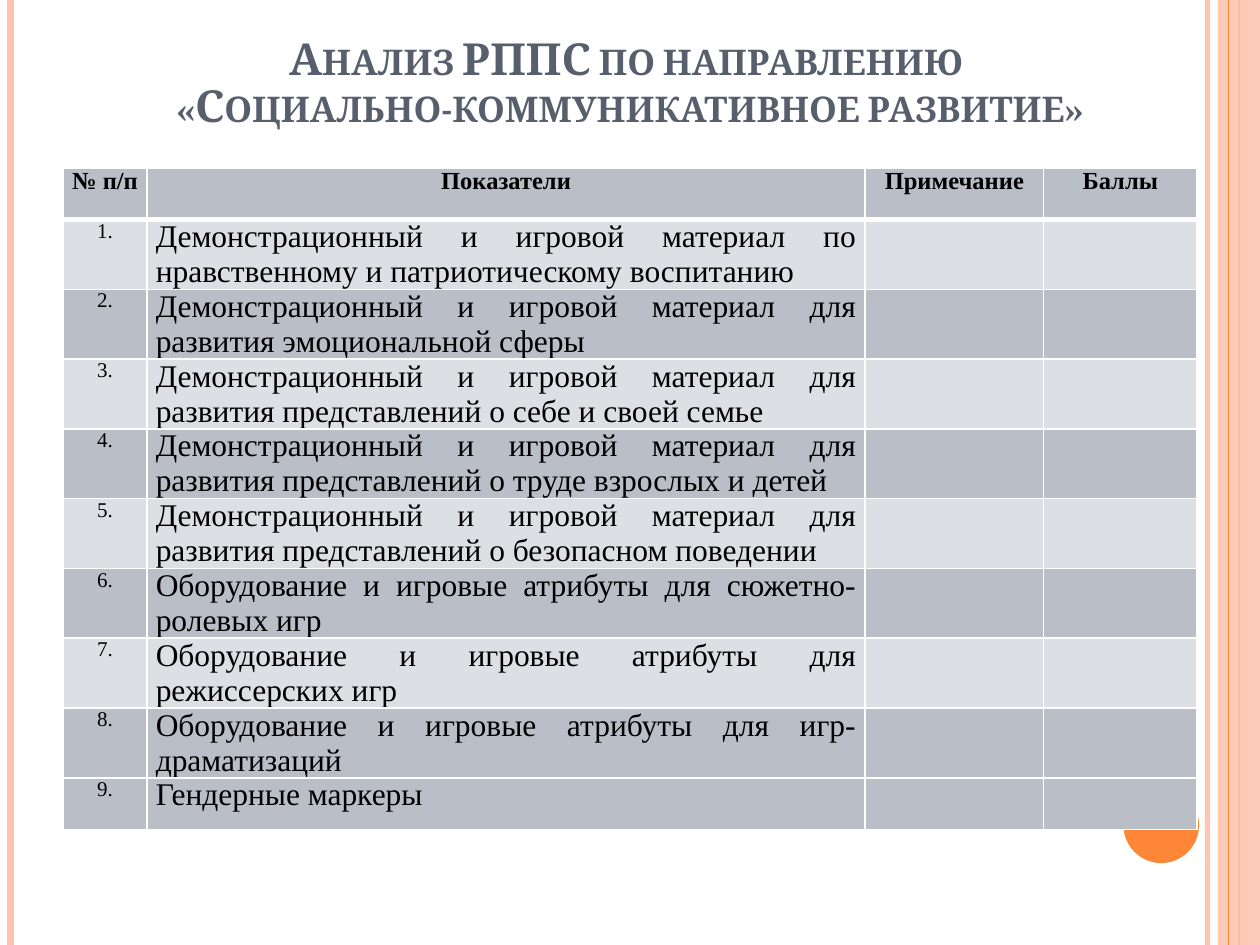
from copy import deepcopy

from lxml.etree import SubElement
from pptx import Presentation
from pptx.dml.color import RGBColor
from pptx.enum.shapes import MSO_CONNECTOR as Connector, MSO_SHAPE as Preset
from pptx.enum.text import MSO_ANCHOR as Anchor, MSO_AUTO_SIZE as AutoSize, PP_ALIGN as Align
from pptx.oxml import parse_xml
from pptx.oxml.ns import nsdecls, qn
from pptx.util import Inches, Pt

COLUMNS, ROWS = 120, 90
PEACH, ORANGE, SLATE = "FEC3AE", "FE8637", "575F6D"
DARK, LIGHT, BLACK, WHITE = "B9BEC7", "DCDFE3", "000000", "FFFFFF"
HEADER = ["№ п/п", "Показатели", "Примечание", "Баллы"]
DEMO = "Демонстрационный и игровой материал "
GEAR = "Оборудование и игровые атрибуты для "
INDICATORS = [
    DEMO + "по нравственному и патриотическому воспитанию",
    DEMO + "для развития эмоциональной сферы",
    DEMO + "для развития представлений о себе и своей семье",
    DEMO + "для развития представлений о труде взрослых и детей",
    DEMO + "для развития представлений о безопасном поведении ",
    GEAR + "сюжетно-ролевых игр",
    GEAR + "режиссерских игр",
    GEAR + "игр-драматизаций",
    "Гендерные маркеры ",
]
STRIPES = [
    (115, PEACH, 3, 93),
    (1, PEACH, 4.5, 100),
    (118, ORANGE, 1.5, 100),
    (117, ORANGE, 0.75, 100),
]


def color(value):
    return RGBColor.from_string(value)


def assign(target, values):
    for name, value in values.items():
        setattr(target, name, value)


class SlideBuilder:
    """Draws styled elements on a 120 by 90 grid of the current slide."""

    title_font = {"name": "Cambria", "size": Pt(25.2), "bold": True}
    table_font = {"name": "Times New Roman"}
    margins = {"margin_left": Inches(0.07), "margin_right": Inches(0.07),
               "margin_top": 0, "margin_bottom": 0}

    def __init__(self):
        self.deck = Presentation()
        assign(self.deck, {"slide_width": Inches(10), "slide_height": Inches(7.5)})
        self.slide = self.deck.slides.add_slide(self.deck.slide_layouts[5])
        self.shapes = self.slide.shapes

    def across(self, columns):
        return round(self.deck.slide_width * columns / COLUMNS)

    def down(self, rows):
        return round(self.deck.slide_height * rows / ROWS)

    def area(self, left, top, width, height):
        return self.across(left), self.down(top), self.across(width), self.down(height)

    def fade(self, element, opacity):
        for tint in element.iter(qn("a:srgbClr")):
            SubElement(tint, qn("a:alpha"), val=str(opacity * 1000))

    def stripe(self, column, tone, weight, opacity):
        x = self.across(column)
        line = self.shapes.add_connector(Connector.STRAIGHT, x, 0, x, self.down(ROWS))
        line.line.color.rgb = color(tone)
        line.line.width = Pt(weight)
        properties = line._element.spPr
        if opacity < 100:
            self.fade(properties, opacity)
        SubElement(properties, qn("a:effectLst"))

    def shape(self, preset, area, tone, opacity=100):
        shape = self.shapes.add_shape(preset, *self.area(*area))
        shape.shadow.inherit = False
        shape.fill.solid()
        shape.fill.fore_color.rgb = color(tone)
        shape.line.fill.background()
        if opacity < 100:
            self.fade(shape._element.spPr, opacity)

    def title(self, text, area):
        title = self.shapes.title
        assign(title, dict(zip(("left", "top", "width", "height"), self.area(*area))))
        frame = title.text_frame
        assign(frame, {"word_wrap": True, "auto_size": AutoSize.NONE,
                       "vertical_anchor": Anchor.BOTTOM})
        para = frame.paragraphs[0]
        para.text = text
        assign(para, {"alignment": Align.CENTER, "line_spacing": 0.9})
        for span in para.runs:
            assign(span.font, self.title_font)
            span.font.color.rgb = color(SLATE)
            span.font._element.set("cap", "small")
        for line_break in para._p.findall(qn("a:br")):
            line_break.append(deepcopy(para.runs[0].font._element))

    def borders(self, cell, top, bottom):
        weights = {"lnL": 1, "lnR": 1, "lnT": top, "lnB": bottom}
        for index, (side, weight) in enumerate(weights.items()):
            cell._tc.get_or_add_tcPr().insert(index, parse_xml(
                f'<a:{side} {nsdecls("a")} w="{Pt(weight)}"><a:solidFill>'
                f'<a:srgbClr val="{WHITE}"/></a:solidFill></a:{side}>'))

    def cell(self, cell, text, tone, size, align, bold):
        cell.fill.solid()
        cell.fill.fore_color.rgb = color(tone)
        if text:
            assign(cell, self.margins)
            para = cell.text_frame.paragraphs[0]
            para.alignment = align
            span = para.add_run()
            span.text = text
            assign(span.font, {**self.table_font, "size": Pt(size), "bold": bold})
            span.font.color.rgb = color(BLACK)

    def table(self, left, top, widths, row_height, records):
        area = self.area(left, top, sum(widths), row_height * len(records))
        table = self.shapes.add_table(len(records), len(widths), *area).table
        for column, width in zip(table.columns, widths):
            column.width = self.across(width)
        last = len(records) - 1
        for r, record in enumerate(records):
            table.rows[r].height = self.down(row_height)
            tone = LIGHT if r % 2 and r < last else DARK
            for c, text in enumerate(record):
                size = 14 if r == 0 else 18 if c else 12
                align = Align.JUSTIFY if r and c else Align.CENTER
                cell = table.cell(r, c)
                self.cell(cell, text, tone, size, align, r == 0)
                self.borders(cell, 3 if r == 1 else 1, 3 if r == 0 else 1)


def main():
    builder = SlideBuilder()
    for stripe in STRIPES[:3]:
        builder.stripe(*stripe)
    builder.shape(Preset.RECTANGLE, (116, 0, 4, ROWS), PEACH, 87)
    builder.stripe(*STRIPES[3])
    builder.shape(Preset.OVAL, (107, 75, 7.2, 7.2), ORANGE)
    builder.title("Анализ РППС по направлению \v«Социально-коммуникативное развитие»",
                  (6, 1.9, 108, 11.3))
    records = [[f"{number}.", text, "", ""] for number, text in enumerate(INDICATORS, 1)]
    builder.table(6, 16, [8, 68.4, 17, 14.6], 4.9, [HEADER, *records])
    builder.deck.save("out.pptx")


if __name__ == "__main__":
    main()
